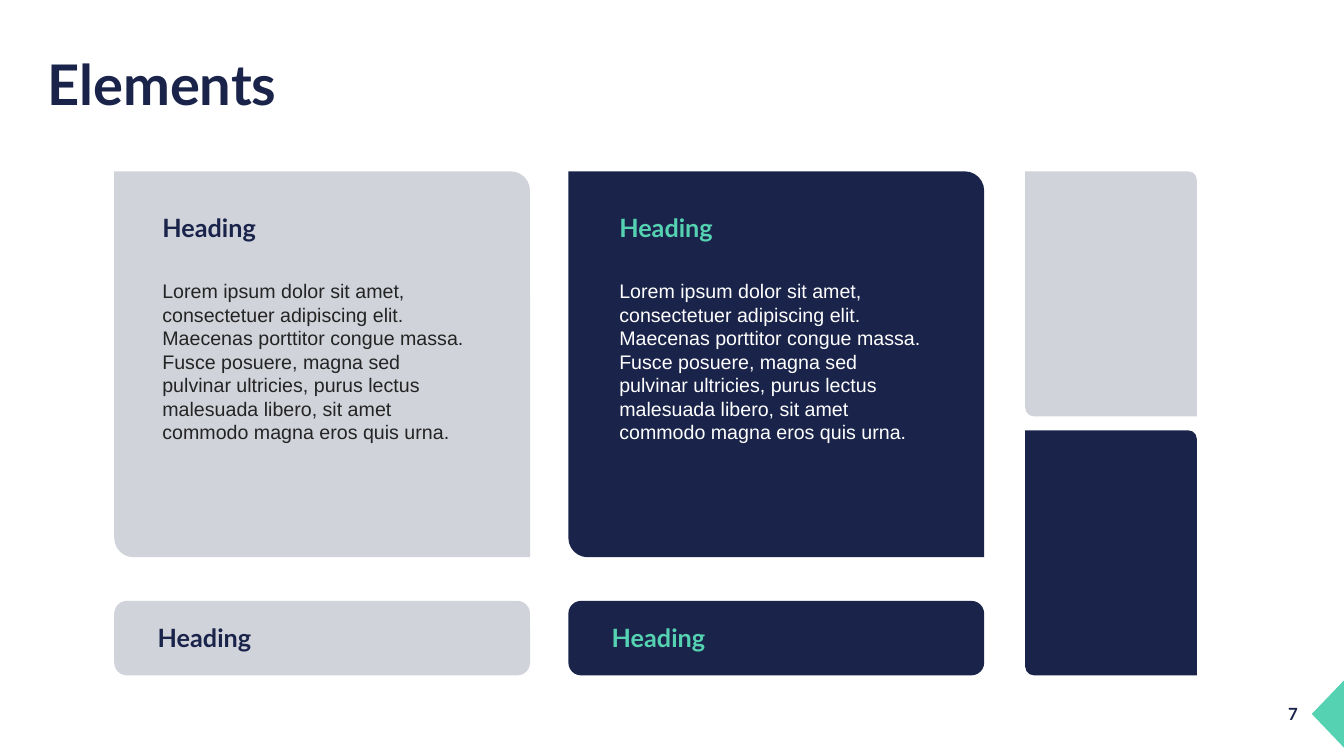
from dataclasses import dataclass

import pptx
import pptx.dml.color
import pptx.enum.shapes
import pptx.enum.text
import pptx.util

Pt = pptx.util.Pt
Shapes = pptx.enum.shapes.MSO_SHAPE
Anchor = pptx.enum.text.MSO_ANCHOR

NAVY, GREY, MINT = "1A244A", "D1D3DB", "55D2B1"
INK, WHITE = "242424", "FFFFFF"

CARD_TOP, CARD_WIDTH, CARD_HEIGHT = 122.4, 297, 275.6
BAR_TOP, BAR_HEIGHT = 429.2, 53.2
TILE_LEFT, TILE_WIDTH, TILE_HEIGHT, TILE_STEP = 732.3, 122.6, 175, 185
TEXT_WIDTH, HEADING_HEIGHT, BODY_HEIGHT = 232, 29, 126
HEADING_TOP, BODY_TOP, BAR_HEADING_TOP = 148.3, 195.8, 441.3

BODY = (
    "Lorem ipsum dolor sit amet, consectetuer adipiscing elit. "
    "Maecenas porttitor congue massa. Fusce posuere, magna sed pulvinar "
    "ultricies, purus lectus malesuada libero, sit amet commodo magna eros quis urna."
)


@dataclass(frozen=True)
class Frame:
    left: float
    top: float
    width: float
    height: float

    def lengths(self) -> list[pptx.util.Length]:
        return [Pt(value) for value in (self.left, self.top, self.width, self.height)]


@dataclass(frozen=True)
class Style:
    size: float
    font: str = "Lato"
    bold: bool = True


@dataclass(frozen=True)
class Column:
    left: float
    text_left: float
    bar_text_left: float
    fill: str
    heading_color: str
    body_color: str


TITLE_STYLE, HEADING_STYLE, NUMBER_STYLE = Style(40), Style(18), Style(12)
BODY_STYLE = Style(14, "Arial", False)

COLUMNS = [
    Column(81.6, 108.9, 105.6, GREY, NAVY, INK),
    Column(406, 435.3, 429.9, NAVY, MINT, WHITE),
]


def color(code: str) -> pptx.dml.color.RGBColor:
    return pptx.dml.color.RGBColor.from_string(code)


def paint(shape, fill: str) -> None:
    shape.shadow.inherit = False
    shape.fill.solid()
    shape.fill.fore_color.rgb = color(fill)
    shape.line.fill.background()


def add_block(page, kind, frame: Frame, corners: list[float], fill: str) -> None:
    shape = page.shapes.add_shape(kind, *frame.lengths())
    for index, corner in enumerate(corners):
        shape.adjustments[index] = corner
    paint(shape, fill)


def add_text(page, frame: Frame, text: str, style: Style, ink: str,
             anchor=Anchor.TOP, spacing: float = 1.0) -> None:
    box = page.shapes.add_textbox(*frame.lengths())
    settings = {"word_wrap": True, "vertical_anchor": anchor}
    for name, value in settings.items():
        setattr(box.text_frame, name, value)
    para = box.text_frame.paragraphs[0]
    para.line_spacing = spacing
    span = para.add_run()
    span.text = text
    formats = {"size": Pt(style.size), "name": style.font, "bold": style.bold}
    for name, value in formats.items():
        setattr(span.font, name, value)
    span.font.color.rgb = color(ink)


def add_column(page, column: Column) -> None:
    add_block(page, Shapes.ROUND_2_DIAG_RECTANGLE,
              Frame(column.left, CARD_TOP, CARD_WIDTH, CARD_HEIGHT), [0, 0.05], column.fill)
    add_text(page, Frame(column.text_left, HEADING_TOP, TEXT_WIDTH, HEADING_HEIGHT),
             "Heading", HEADING_STYLE, column.heading_color)
    add_text(page, Frame(column.text_left, BODY_TOP, TEXT_WIDTH, BODY_HEIGHT),
             BODY, BODY_STYLE, column.body_color)
    add_block(page, Shapes.ROUNDED_RECTANGLE,
              Frame(column.left, BAR_TOP, CARD_WIDTH, BAR_HEIGHT), [0.17], column.fill)
    add_text(page, Frame(column.bar_text_left, BAR_HEADING_TOP, TEXT_WIDTH, HEADING_HEIGHT),
             "Heading", HEADING_STYLE, column.heading_color)


def add_corner_marker(page) -> None:
    outline = [(937.6, 511.4), (937, 510), (937.6, 508.6), (960, 486.5)]
    builder = page.shapes.build_freeform(960, 533.5, scale=float(Pt(1)))
    builder.add_line_segments(outline, close=True)
    paint(builder.convert_to_shape(), MINT)


def main() -> None:
    deck = pptx.Presentation()
    deck.slide_width, deck.slide_height = Pt(960), Pt(540)
    page = deck.slides.add_slide(deck.slide_layouts[6])

    add_corner_marker(page)
    add_text(page, Frame(913, 499, 29, 36), "7", NUMBER_STYLE, NAVY)
    add_text(page, Frame(26.8, 33.8, 828, 57), "Elements", TITLE_STYLE, NAVY,
             Anchor.MIDDLE, 0.9)
    for column in COLUMNS:
        add_column(page, column)
    for row, fill in enumerate([GREY, NAVY]):
        top = CARD_TOP + row * TILE_STEP
        add_block(page, Shapes.ROUND_2_DIAG_RECTANGLE,
                  Frame(TILE_LEFT, top, TILE_WIDTH, TILE_HEIGHT), [0, 0.05], fill)

    deck.save("out.pptx")


if __name__ == "__main__":
    main()
